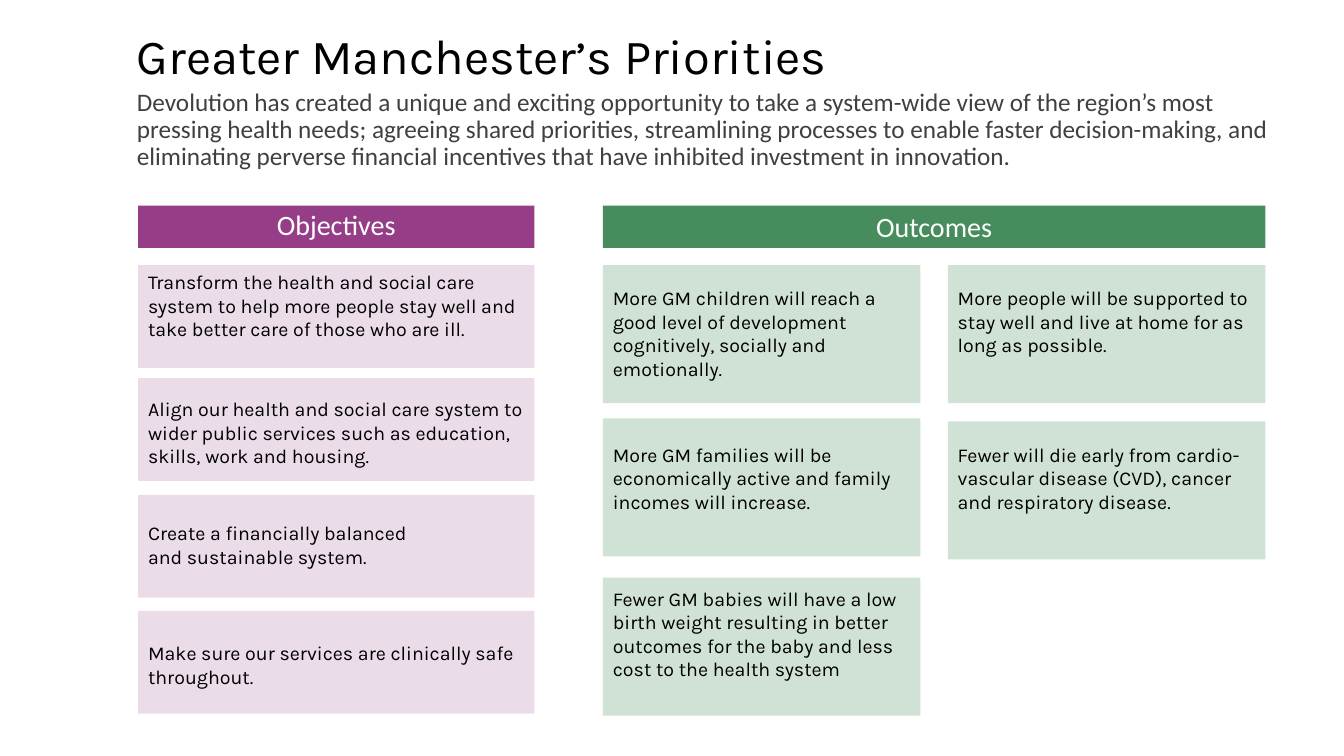
from dataclasses import dataclass

from lxml.etree import SubElement
from pptx import Presentation
from pptx.dml.color import RGBColor
from pptx.enum.shapes import MSO_SHAPE
from pptx.enum.text import MSO_ANCHOR, MSO_AUTO_SIZE, PP_ALIGN
from pptx.oxml.ns import qn
from pptx.util import Inches, Pt


@dataclass(frozen=True)
class Theme:
    heading_font: str = "Karla"
    body_font: str = "Calibri"
    black: str = "000000"
    gray: str = "404040"
    white: str = "FFFFFF"
    purple: str = "953D86"
    green: str = "478C5C"
    purple_opacity: int = 18
    green_opacity: int = 25
    title_size: int = 35
    intro_size: int = 18
    band_size: int = 20
    card_size: int = 14


THEME = Theme()
CARDS_OFFSET = 0.59  # from the top of a heading band to its first card
BAND_HEIGHT = 0.42

TITLE = "Greater Manchester’s Priorities"
INTRO = (
    "Devolution has created a unique and exciting opportunity to take a system-wide view "
    "of the region’s most pressing health needs; agreeing shared priorities, streamlining "
    "processes to enable faster decision-making, and eliminating perverse financial "
    "incentives that have inhibited investment in innovation."
)

# Each card: top below the first card, text top within the card, text height, text
OBJECTIVES = [
    (0, 0, 0.81, "Transform the health and social care system to help more people stay well "
     "and take better care of those who are ill."),
    (1.12, 0.14, 0.81, "Align our health and social care system to wider public services "
     "such as education, skills, work and housing."),
    (2.28, 0.21, 0.81, "Create a financially balanced\vand sustainable system."),
    (3.43, 0.25, 0.57, "Make sure our services are clinically safe throughout."),
]
OUTCOMES_LEFT = [
    (0, 0.16, 1.04, "More GM children will reach a good level of development cognitively, "
     "socially and emotionally."),
    (1.52, 0.19, 0.81, "More GM families will be economically active and family incomes "
     "will increase."),
    (3.1, 0.04, 1.04, "Fewer GM babies will have a low birth weight resulting in better "
     "outcomes for the baby and less cost to the health system"),
]
OUTCOMES_RIGHT = [
    (0, 0.16, 0.81, "More people will be supported to stay well and live at home for as "
     "long as possible."),
    (1.55, 0.16, 0.81, "Fewer will die early from cardio-vascular disease (CVD), cancer "
     "and respiratory disease."),
]


def add_rectangle(slide, left, top, width, height, color, opacity=100):
    shape = slide.shapes.add_shape(
        MSO_SHAPE.RECTANGLE, Inches(left), Inches(top), Inches(width), Inches(height))
    shape.shadow.inherit = False
    shape.line.fill.background()
    shape.fill.solid()
    shape.fill.fore_color.rgb = RGBColor.from_string(color)
    if opacity < 100:
        color_element = shape.fill._xPr.find(qn("a:solidFill"))[0]
        SubElement(color_element, qn("a:alpha")).set("val", str(opacity * 1000))
    return shape


def add_text(slide, left, top, width, height, text, font, size, color,
             line_spacing=None, anchor=MSO_ANCHOR.TOP, align=PP_ALIGN.LEFT, grow=False):
    text_box = slide.shapes.add_textbox(
        Inches(left), Inches(top), Inches(width), Inches(height))
    frame = text_box.text_frame
    frame.word_wrap = True
    frame.vertical_anchor = anchor
    frame.auto_size = MSO_AUTO_SIZE.SHAPE_TO_FIT_TEXT if grow else MSO_AUTO_SIZE.NONE
    paragraph = frame.paragraphs[0]
    paragraph.text = text
    paragraph.alignment = align
    paragraph.line_spacing = line_spacing
    paragraph.font.name = font
    paragraph.font.size = Pt(size)
    paragraph.font.color.rgb = RGBColor.from_string(color)


def add_header(slide, left, top):
    add_text(slide, left, top, 11.29, 0.7, TITLE, THEME.heading_font, THEME.title_size,
             THEME.black, line_spacing=0.9, anchor=MSO_ANCHOR.MIDDLE)
    add_text(slide, left, top + 0.61, 11.56, 1.33, INTRO, THEME.body_font,
             THEME.intro_size, THEME.gray, line_spacing=0.9)


def add_band(slide, left, top, width, label, color, label_drop=0):
    add_rectangle(slide, left, top, width, BAND_HEIGHT, color)
    add_text(slide, left, top + label_drop, width, BAND_HEIGHT, label, THEME.body_font,
             THEME.band_size, THEME.white, line_spacing=0.9,
             anchor=MSO_ANCHOR.MIDDLE, align=PP_ALIGN.CENTER)


def add_cards(slide, left, top, width, height, cards, color, opacity, text_width):
    for card_top, text_top, text_height, text in cards:
        add_rectangle(slide, left, top + card_top, width, height, color, opacity)
        add_text(slide, left, top + card_top + text_top, text_width, text_height, text,
                 THEME.heading_font, THEME.card_size, THEME.black, grow=True)


def add_objectives(slide, left, top, width):
    add_band(slide, left, top, width, "Objectives", THEME.purple)
    add_cards(slide, left, top + CARDS_OFFSET, width, 1.02, OBJECTIVES,
              THEME.purple, THEME.purple_opacity, text_width=width + 0.11)


def add_outcomes(slide, left, top, width):
    add_band(slide, left, top, width, "Outcomes", THEME.green, label_drop=0.02)
    card_width = 3.15
    columns = [(left, OUTCOMES_LEFT), (left + width - card_width, OUTCOMES_RIGHT)]
    for column_left, cards in columns:
        add_cards(slide, column_left, top + CARDS_OFFSET, card_width, 1.37, cards,
                  THEME.green, THEME.green_opacity, text_width=card_width)


def main():
    presentation = Presentation()
    presentation.slide_width = Inches(13.33)
    presentation.slide_height = Inches(7.5)
    slide = presentation.slides.add_slide(presentation.slide_layouts[6])

    add_header(slide, 1.26, 0.23)
    add_objectives(slide, 1.37, 2.04, 3.93)
    add_outcomes(slide, 5.98, 2.04, 6.57)

    presentation.save("out.pptx")


if __name__ == "__main__":
    main()
